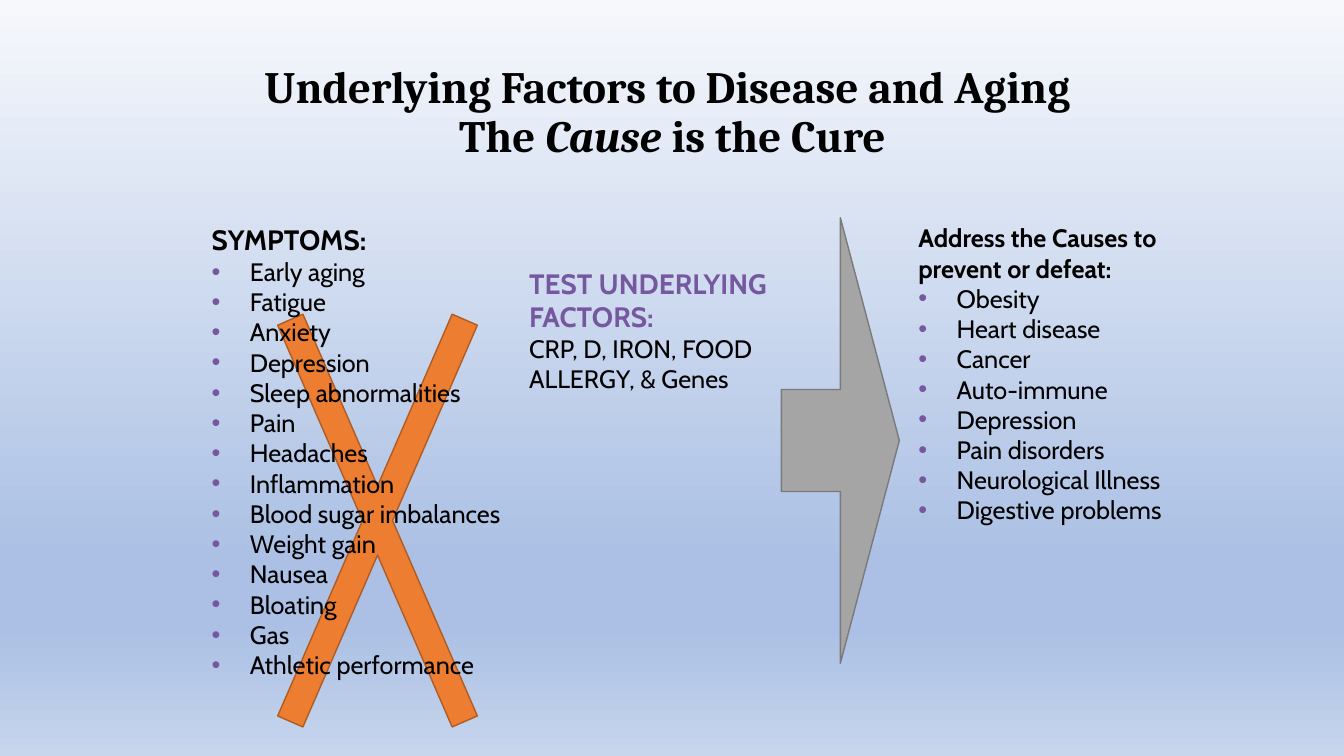
from lxml.etree import SubElement
from pptx import Presentation
from pptx.dml.color import RGBColor
from pptx.enum.shapes import MSO_SHAPE as Preset
from pptx.enum.text import MSO_ANCHOR as Anchor, MSO_AUTO_SIZE as AutoSize, PP_ALIGN as Align
from pptx.oxml.ns import qn
from pptx.util import Inches, Pt

SYMPTOMS = [
    "Early aging", "Fatigue", "Anxiety", "Depression", "Sleep abnormalities",
    "Pain", "Headaches", "Inflammation", "Blood sugar imbalances",
    "Weight gain", "Nausea", "Bloating", "Gas", "Athletic performance",
]
DISEASES = [
    "Obesity", "Heart disease", "Cancer", "Auto-immune", "Depression",
    "Pain disorders", "Neurological Illness", "Digestive problems",
]


def color(value):
    return RGBColor.from_string(value)


def write(para, text, size=18, font="Cabin", ink="000000", bold=False, italic=False):
    """Append one formatted span to a paragraph."""
    span = para.add_run()
    span.text = text
    span.font.name = font
    span.font.size = Pt(size)
    span.font.bold = bold
    span.font.italic = italic
    span.font.color.rgb = color(ink)


class SlideBuilder:
    accent = "76589F"
    indent = 0.38

    def __init__(self, deck):
        self.slide = deck.slides.add_slide(deck.slide_layouts[5])

    def background(self, stops):
        """Fill downwards; each stop is position, colour and opacity in percent."""
        fill = self.slide.background.fill
        fill.gradient()
        fill.gradient_angle = 270
        stop_list = self.slide.element.xpath(".//p:bg//a:gsLst")[0]
        for old_stop in list(stop_list):
            stop_list.remove(old_stop)
        for position, value, opacity in stops:
            stop = SubElement(stop_list, qn("a:gs"), pos=str(position * 1000))
            tint = SubElement(stop, qn("a:srgbClr"), val=value)
            if opacity < 100:
                SubElement(tint, qn("a:alpha"), val=str(opacity * 1000))

    def title(self, lines, left, top, width, height):
        """Each line is a list of (text, italic) pairs."""
        box = self.slide.shapes.title
        box.left, box.top = Inches(left), Inches(top)
        box.width, box.height = Inches(width), Inches(height)
        frame = box.text_frame
        frame.auto_size = AutoSize.NONE
        frame.vertical_anchor = Anchor.MIDDLE
        para = frame.paragraphs[0]
        para.alignment = Align.CENTER
        para.line_spacing = 0.9
        for index, line in enumerate(lines):
            if index:
                para.add_line_break()
            for text, italic in line:
                write(para, text, size=32, font="Cambria", bold=True, italic=italic)

    def text(self, heading, left, top, width, height, body="", bullets=(), **heading_format):
        box = self.slide.shapes.add_textbox(
            Inches(left), Inches(top), Inches(width), Inches(height))
        frame = box.text_frame
        frame.word_wrap = True
        frame.auto_size = AutoSize.SHAPE_TO_FIT_TEXT
        write(frame.paragraphs[0], heading, bold=True, **heading_format)
        if body:
            write(frame.add_paragraph(), body)
        for item in bullets:
            para = frame.add_paragraph()
            self.bullet(para)
            write(para, item)

    def bullet(self, para):
        props = para._p.get_or_add_pPr()
        props.set("marL", str(Inches(self.indent)))
        props.set("indent", str(-Inches(self.indent)))
        tint = SubElement(props, qn("a:buClr"))
        SubElement(tint, qn("a:srgbClr"), val=self.accent)
        SubElement(props, qn("a:buFont"), typeface="Arial")
        SubElement(props, qn("a:buChar"), char="•")

    def shape(self, preset, left, top, width, height, fill, line, adjustments):
        shape = self.slide.shapes.add_shape(
            preset, Inches(left), Inches(top), Inches(width), Inches(height))
        shape.shadow.inherit = False
        shape.fill.solid()
        shape.fill.fore_color.rgb = color(fill)
        shape.line.color.rgb = color(line)
        shape.line.width = Pt(1)
        for index, value in enumerate(adjustments):
            shape.adjustments[index] = value


def main():
    deck = Presentation()
    deck.slide_width, deck.slide_height = Inches(13.33), Inches(7.5)
    page = SlideBuilder(deck)
    page.background([(0, "F6F8FC", 53), (74, "ABC0E4", 100),
                     (83, "ABC0E4", 100), (100, "C7D5ED", 100)])
    page.title([[("Underlying Factors to Disease and Aging ", False)],
                [("The ", False), ("Cause", True), (" is the Cure", False)]],
               0.92, 0.4, 11.5, 1.45)
    page.shape(Preset.MATH_MULTIPLY, 2.08, 1.33, 3.33, 7.67,
               fill="ED7D31", line="AF5C24", adjustments=[0.082])
    page.text("SYMPTOMS:", 2, 2.16, 3.42, 4.75, bullets=SYMPTOMS, size=20)
    page.text("TEST UNDERLYING FACTORS:", 5.15, 2.59, 2.75, 1.72,
              body="CRP, D, IRON, FOOD ALLERGY, & Genes", size=20, ink=page.accent)
    page.text("Address the Causes to prevent or defeat:", 9.01, 2.16, 2.67, 4.34,
              bullets=DISEASES)
    page.shape(Preset.RIGHT_ARROW, 7.75, 2.16, 1.17, 4.42,
               fill="A5A5A5", line="7A7A7A", adjustments=[0.229, 0.5])
    deck.save("out.pptx")


if __name__ == "__main__":
    main()
